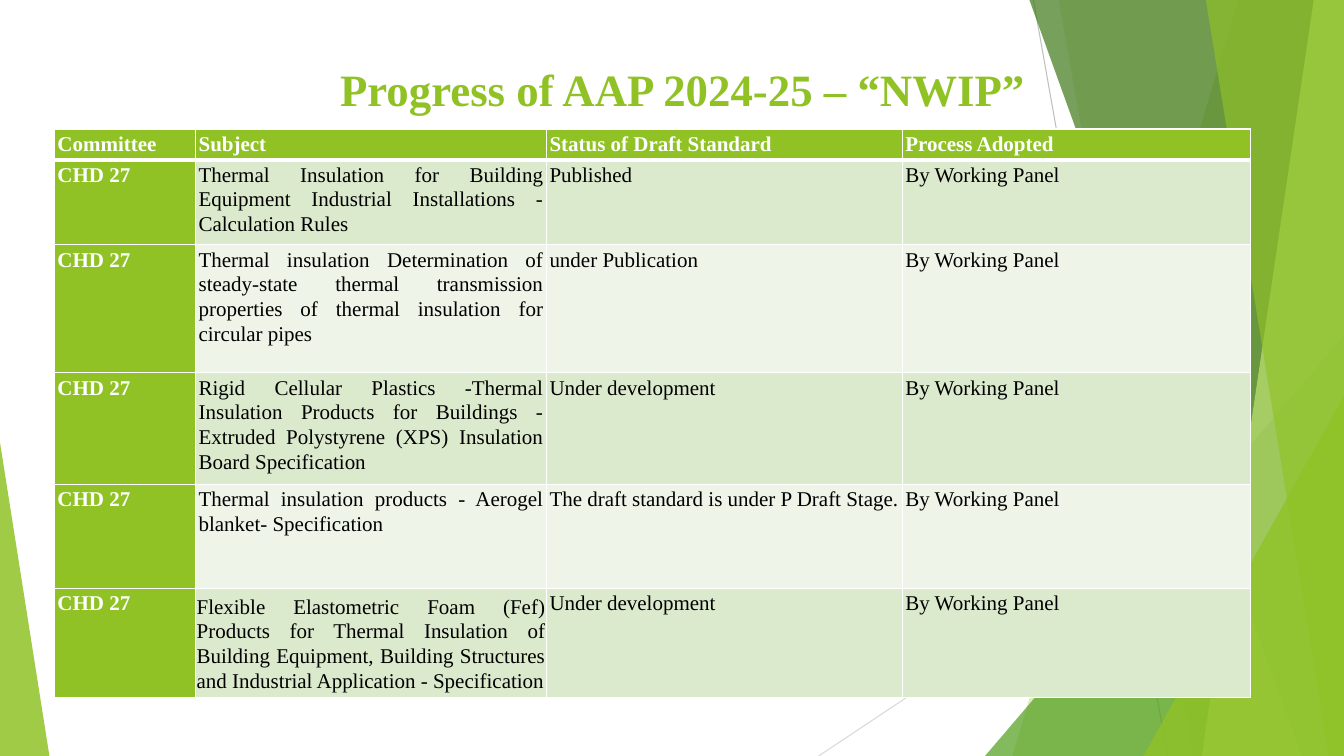
from lxml import etree
from pptx import Presentation
from pptx import util as u
from pptx.dml.color import RGBColor
from pptx.enum import shapes, text
from pptx.oxml import ns

HUES = {"lime": "90C226", "leaf": "54A021", "pine": "3F7819", "pale": "C0E474",
        "dark": "BFBFBF", "soft": "D9D9D9", "band": "DBE9CD", "light": "EEF4E8",
        "white": "FFFFFF", "black": "000000"}
FONT = "Times New Roman"
WIDE, HIGH = 13.33, 7.5

LINES = [((10.25, 0), (11.58, HIGH), "dark"), ((WIDE, 4.03), (8.12, HIGH), "soft")]
SHARDS = [("band", 12.28, 10.04, "lime", 30), ("band", 10.5, 11.83, "lime", 20),
          ("peak", (9.77, 3.33, 3.56, 4.17), 1, "leaf", 72),
          ("band", 10.21, 12.91, "pine", 70), ("band", 13.03, 11.92, "pale", 70),
          ("band", 11.96, 13.18, "lime", 65),
          ("peak", (11.34, 3.93, 1.99, 3.57), 1, "lime", 80),
          ("peak", (0, 4.39, 0.49, 3.11), 0, "lime", 85)]

HEADS = ["Committee", "Subject", "Status of Draft Standard", "Process Adopted"]
ITEMS = [
    ("Thermal Insulation for Building Equipment Industrial Installations - "
     "Calculation Rules", "Published"),
    ("Thermal insulation Determination of steady-state thermal transmission "
     "properties of thermal insulation for circular pipes", "under Publication"),
    ("Rigid Cellular Plastics -Thermal Insulation Products for Buildings - "
     "Extruded Polystyrene (XPS) Insulation Board Specification", "Under development"),
    ("Thermal insulation products - Aerogel blanket- Specification",
     "The draft standard is under P Draft Stage."),
    ("Flexible Elastometric Foam (Fef) Products for Thermal Insulation of Building "
     "Equipment, Building Structures and Industrial Application - Specification",
     "Under development")]
COLS = [1.4, 3.48, 3.53, 3.45]
ROWS = [0.29, 0.83, 1.27, 1.03, 1.03, 1.03]


def rgb(hue):
    """Return the named colour."""
    return RGBColor.from_string(HUES[hue])


def tint(shape, hue, alpha):
    """Fill a shape with a see-through colour and no outline."""
    shape.shadow.inherit = False
    shape.fill.solid()
    shape.fill.fore_color.rgb = rgb(hue)
    shape.line.fill.background()
    node = shape.fill._xPr.find(".//" + ns.qn("a:srgbClr"))
    etree.SubElement(node, ns.qn("a:alpha"), val=str(alpha * 1000))


def write(para, words, size, hue, bold):
    """Add one styled run to a paragraph."""
    run = para.add_run()
    run.text = words
    font = run.font
    font.name, font.size, font.bold = FONT, u.Pt(size), bold
    font.color.rgb = rgb(hue)


def add_band(slide, top, foot, box):
    """Build a slanted band reaching the right edge of the box."""
    x, y, w, h = box
    spots = [(x + w, y), (x + w, y + h), (foot, y + h)]
    build = slide.shapes.build_freeform(u.Inches(top), u.Inches(y))
    build.add_line_segments([(u.Inches(a), u.Inches(b)) for a, b in spots])
    return build.convert_to_shape()


def add_peak(slide, box, tip):
    """Add a right-angled triangle with its tip at the given side."""
    peak = slide.shapes.add_shape(shapes.MSO_SHAPE.ISOSCELES_TRIANGLE,
                                  *map(u.Inches, box))
    peak.adjustments[0] = tip
    return peak


def add_decor(slide, box):
    """Draw the thin lines and the green shards."""
    for start, end, hue in LINES:
        line = slide.shapes.add_connector(shapes.MSO_CONNECTOR.STRAIGHT,
                                          *map(u.Inches, start + end))
        line.line.color.rgb = rgb(hue)
        line.line.width = u.Pt(0.75)
        etree.SubElement(line._element.spPr, ns.qn("a:effectLst"))
    for kind, first, second, hue, alpha in SHARDS:
        if kind == "band":
            shard = add_band(slide, first, second, box)
        else:
            shard = add_peak(slide, first, second)
        tint(shard, hue, alpha)


def add_title(slide, box):
    """Place the centred heading."""
    frame = slide.shapes.add_textbox(*map(u.Inches, box)).text_frame
    frame.word_wrap = True
    para = frame.paragraphs[0]
    para.alignment = text.PP_ALIGN.CENTER
    write(para, "Progress of AAP 2024-25 – “NWIP”", 32, "lime", True)


def edge(cell, row):
    """Give a cell white borders, thick below the header."""
    thick = {0: "B", 1: "T"}.get(row)
    props = cell._tc.get_or_add_tcPr()
    for spot, side in enumerate("LRTB"):
        width = u.Pt(3 if side == thick else 1)
        line = etree.Element(ns.qn("a:ln" + side), w=str(width))
        fill = etree.SubElement(line, ns.qn("a:solidFill"))
        etree.SubElement(fill, ns.qn("a:srgbClr"), val=HUES["white"])
        props.insert(spot, line)


def fill_cell(cell, words, row, col):
    """Style one table cell and write its words."""
    strong = row == 0 or col == 0
    tight = row == len(ITEMS) and col == 1
    cell.fill.solid()
    cell.fill.fore_color.rgb = rgb("lime" if strong else "band" if row % 2 else "light")
    edge(cell, row)
    cell.margin_left = cell.margin_right = u.Inches(0.01 if tight else 0.03)
    cell.margin_top = u.Inches(0.01 if tight else 0.02)
    cell.margin_bottom = u.Inches(0 if tight else 0.02)
    if tight:
        cell.vertical_anchor = text.MSO_ANCHOR.MIDDLE
    para = cell.text_frame.paragraphs[0]
    para.line_spacing = 1.07
    if row:
        para.alignment = text.PP_ALIGN.JUSTIFY
    write(para, words, 15, "white" if strong else "black", strong)


def add_grid(slide, box):
    """Place the progress table."""
    table = slide.shapes.add_table(len(ROWS), len(COLS), *map(u.Inches, box)).table
    for col, width in zip(table.columns, COLS):
        col.width = u.Inches(width)
    for row, height in zip(table.rows, ROWS):
        row.height = u.Inches(height)
    lines = [HEADS] + [("CHD 27", *item, "By Working Panel") for item in ITEMS]
    for r, line in enumerate(lines):
        for c, words in enumerate(line):
            fill_cell(table.cell(r, c), words, r, c)


def main():
    """Build and save the slide."""
    deck = Presentation()
    deck.slide_width, deck.slide_height = u.Inches(WIDE), u.Inches(HIGH)
    slide = deck.slides.add_slide(deck.slide_layouts[6])
    add_decor(slide, (0, 0, WIDE, HIGH))
    add_title(slide, (2.07, 0.56, 9.4, 1.44))
    add_grid(slide, (0.54, 1.28, sum(COLS), sum(ROWS)))
    deck.save("out.pptx")


if __name__ == "__main__":
    main()
